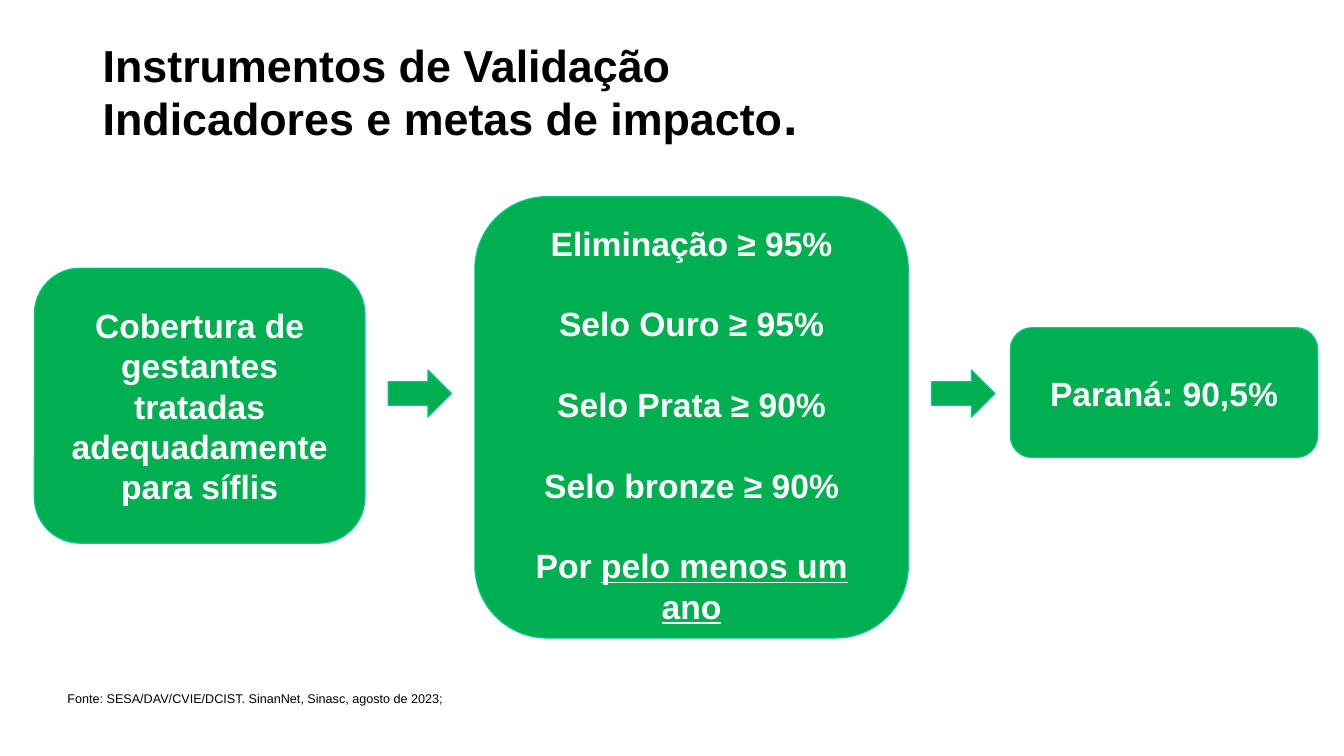
from pptx import Presentation
from pptx.dml.color import RGBColor
from pptx.enum.shapes import MSO_SHAPE
from pptx.enum.text import MSO_ANCHOR, PP_ALIGN
from pptx.util import Inches, Pt

COLORS = {"green": "00B050", "edge": "00CC99", "white": "FFFFFF", "black": "000000"}

prs = Presentation()
prs.slide_width, prs.slide_height = Inches(13.33), Inches(7.5)
s = prs.slides.add_slide(prs.slide_layouts[6])


def add_run(p, text, size, color, bold=True, underline=None):
    r = p.add_run()
    r.text = text
    r.font.name = "Arial"
    r.font.size = Pt(size)
    r.font.bold = bold
    r.font.underline = underline
    r.font.color.rgb = RGBColor.from_string(COLORS[color])


def add_green(kind, left, top, width, height):
    sp = s.shapes.add_shape(kind, Inches(left), Inches(top), Inches(width), Inches(height))
    sp.shadow.inherit = False
    sp.fill.solid()
    sp.fill.fore_color.rgb = RGBColor.from_string(COLORS["green"])
    sp.line.color.rgb = RGBColor.from_string(COLORS["edge"])
    sp.line.width = Pt(0.75)
    return sp


# Title
tf = s.shapes.add_textbox(Inches(0.92), Inches(0.4), Inches(11.49), Inches(1.09)).text_frame
tf.word_wrap = True
tf.vertical_anchor = MSO_ANCHOR.MIDDLE
p = tf.paragraphs[0]
p.line_spacing = 0.9
add_run(p, "Instrumentos de Validação", 32, "black")
p.add_line_break()
add_run(p, "Indicadores e metas de impacto", 32, "black")
add_run(p, ".", 36, "black")

# Source note
tf = s.shapes.add_textbox(Inches(0.57), Inches(6.8), Inches(6.33), Inches(0.25)).text_frame
tf.word_wrap = True
add_run(tf.paragraphs[0], "Fonte: SESA/DAV/CVIE/DCIST. SinanNet, Sinasc, agosto de 2023;",
        9, "black", bold=False)

# Indicator, targets and result: each paragraph is a list of (text, underline)
boxes = [
    ((0.34, 2.66, 3.28, 2.73), MSO_ANCHOR.MIDDLE,
     [[("Cobertura de gestantes tratadas adequadamente para síflis", None)]]),
    ((4.71, 1.95, 4.3, 4.38), MSO_ANCHOR.TOP,
     [[("Eliminação ≥ 95%", None)],
      [("Selo Ouro ≥ 95%", None)],
      [("Selo Prata ≥ 90%", None)],
      [("Selo bronze ≥ 90%", None)],
      [("Por ", None), ("pelo menos um ano", True)]]),
    ((10.02, 3.25, 3.05, 1.29), MSO_ANCHOR.MIDDLE, [[("Paraná: 90,5%", None)]]),
]
for place, anchor, paragraphs in boxes:
    tf = add_green(MSO_SHAPE.ROUNDED_RECTANGLE, *place).text_frame
    tf.word_wrap = True
    tf.vertical_anchor = anchor
    for i, runs in enumerate(paragraphs):
        p = tf.add_paragraph() if i else tf.paragraphs[0]
        p.alignment = PP_ALIGN.CENTER
        if i:
            p.space_before = Pt(28.8)
        for text, underline in runs:
            add_run(p, text, 24, "white", underline=underline)

# Arrows between the boxes
for left in (3.85, 9.24):
    add_green(MSO_SHAPE.RIGHT_ARROW, left, 3.67, 0.63, 0.47)

prs.save("out.pptx")
